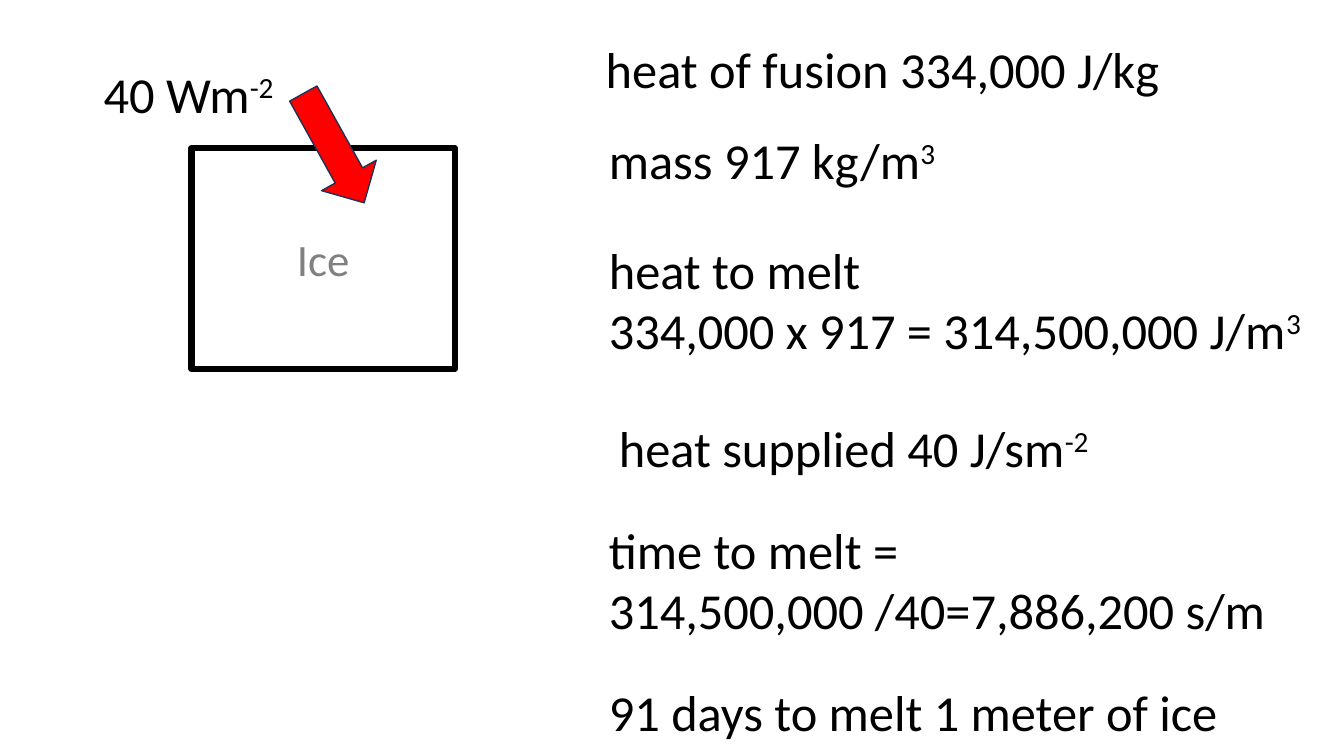
"""Build a slide that works out how long one meter of ice takes to melt."""
from dataclasses import dataclass

from pptx import Presentation
from pptx.dml.color import RGBColor
from pptx.enum.shapes import MSO_SHAPE
from pptx.enum.text import MSO_ANCHOR, MSO_AUTO_SIZE, PP_ALIGN
from pptx.shapes.autoshape import Shape
from pptx.slide import Slide
from pptx.text.text import _Paragraph as Para
from pptx.util import Emu, Pt

PX = 9144


@dataclass(frozen=True)
class Theme:
    """Colours, font and type sizes of the slide."""
    font: str = "Calibri"
    black: str = "000000"
    white: str = "FFFFFF"
    gray: str = "808080"
    red: str = "FF0000"
    navy: str = "1E3256"
    body: int = 36
    label: int = 32


@dataclass(frozen=True)
class Box:
    """A place on the slide in px."""
    left: int
    top: int
    width: int
    height: int

    def emu(self) -> tuple[Emu, ...]:
        """Return the place in EMU."""
        return tuple(Emu(n * PX) for n in (self.left, self.top, self.width, self.height))


@dataclass(frozen=True)
class Note:
    """Lines of text, the last of which may end in a superscript."""
    box: Box
    lines: tuple[str, ...]
    power: str = ""


@dataclass(frozen=True)
class Block:
    """A filled and outlined shape."""
    kind: MSO_SHAPE
    box: Box
    fill: str
    line: str
    weight: float
    turn: float = 0


THEME = Theme()
ICE = Block(MSO_SHAPE.RECTANGLE, Box(190, 147, 261, 219), THEME.white, THEME.black, 4.5)
HEAT = Block(MSO_SHAPE.DOWN_ARROW, Box(300, 85, 62, 124), THEME.red, THEME.navy, 1, 330.9)
NOTES = (
    Note(Box(591, 33, 574, 71), ("heat of fusion 334,000 J/kg",)),
    Note(Box(594, 123, 349, 71), ("mass 917 kg/m",), "3"),
    Note(Box(594, 232, 716, 131),
         ("heat to melt", "334,000 x 917 = 314,500,000 J/m"), "3"),
    Note(Box(604, 409, 494, 71), ("heat supplied 40 J/sm",), "-2"),
    Note(Box(594, 510, 678, 131),
         ("time to melt =", "314,500,000 /40=7,886,200 s/m")),
    Note(Box(594, 671, 629, 71), ("91 days to melt 1 meter of ice",)),
    Note(Box(93, 58, 194, 71), ("40 Wm",), "-2"),
)


def style(para: Para, size: int, color: str) -> None:
    """Set the font of a paragraph."""
    para.font.name = THEME.font
    para.font.size = Pt(size)
    para.font.color.rgb = RGBColor.from_string(color)


def draw(slide: Slide, block: Block) -> Shape:
    """Add a filled shape."""
    shape = slide.shapes.add_shape(block.kind, *block.box.emu())
    shape.shadow.inherit = False
    shape.fill.solid()
    shape.fill.fore_color.rgb = RGBColor.from_string(block.fill)
    shape.line.color.rgb = RGBColor.from_string(block.line)
    shape.line.width = Pt(block.weight)
    shape.rotation = block.turn
    return shape


def label(shape: Shape, text: str) -> None:
    """Write centred text in a shape."""
    frame = shape.text_frame
    frame.vertical_anchor = MSO_ANCHOR.MIDDLE
    para = frame.paragraphs[0]
    para.text = text
    para.alignment = PP_ALIGN.CENTER
    style(para, THEME.label, THEME.gray)


def write(slide: Slide, note: Note) -> None:
    """Add a text box with its superscript."""
    frame = slide.shapes.add_textbox(*note.box.emu()).text_frame
    frame.word_wrap = False
    frame.auto_size = MSO_AUTO_SIZE.SHAPE_TO_FIT_TEXT
    frame.text = "\n".join(note.lines)
    for para in frame.paragraphs:
        style(para, THEME.body, THEME.black)
    if note.power:
        run = frame.paragraphs[-1].add_run()
        run.text = note.power
        run._r.get_or_add_rPr().set("baseline", "30000")


def main() -> None:
    """Build and save the slide."""
    deck = Presentation()
    deck.slide_width, deck.slide_height = Emu(1333 * PX), Emu(750 * PX)
    slide = deck.slides.add_slide(deck.slide_layouts[6])
    label(draw(slide, ICE), "Ice")
    for note in NOTES:
        write(slide, note)
    draw(slide, HEAT)
    deck.save("out.pptx")


if __name__ == "__main__":
    main()
